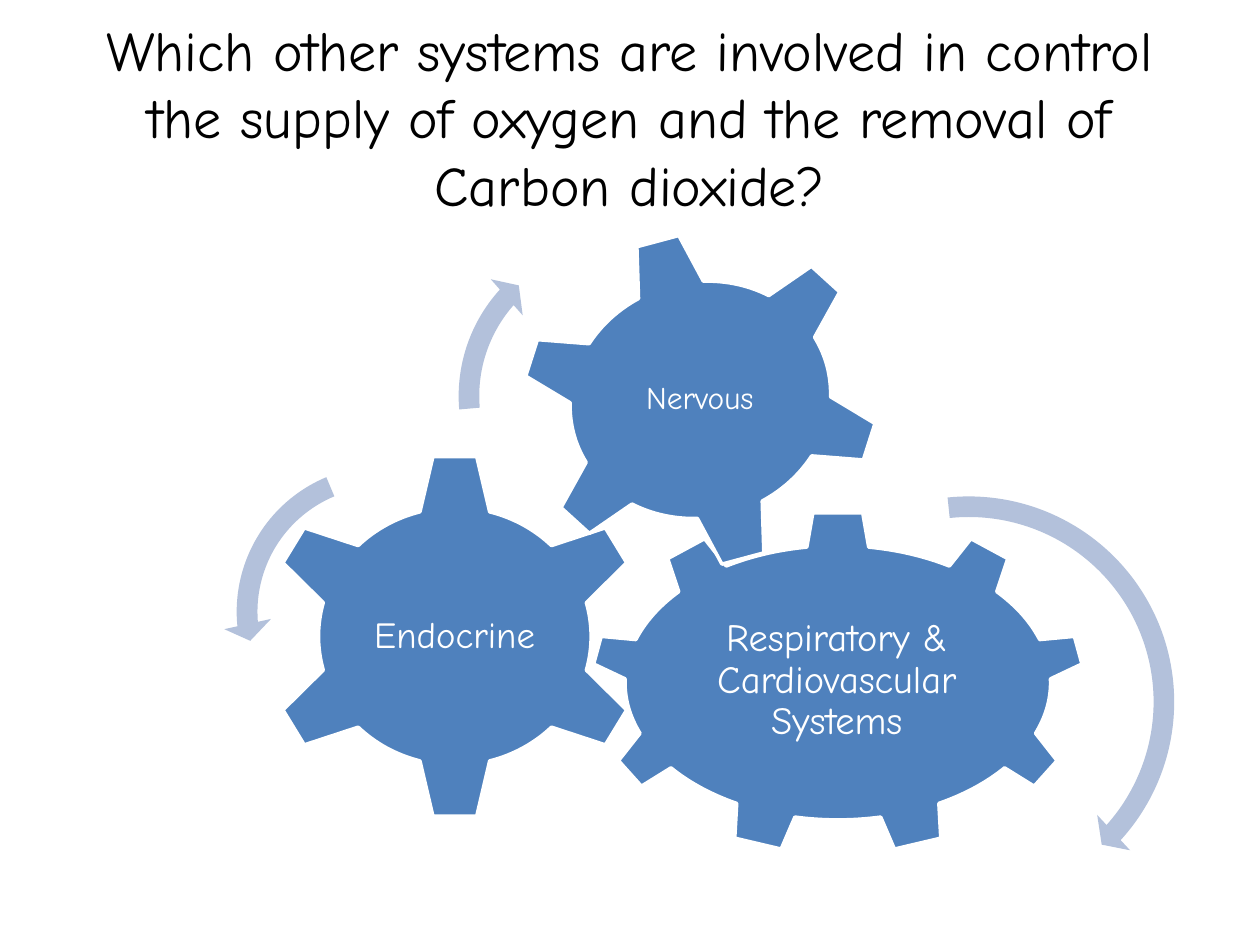
from pptx import Presentation
from pptx.dml.color import RGBColor
from pptx.enum.shapes import MSO_SHAPE
from pptx.enum.text import MSO_ANCHOR, PP_ALIGN
from pptx.util import Cm, Pt

GEAR_6, GEAR_9 = MSO_SHAPE.GEAR_6, MSO_SHAPE.GEAR_9
CLOCKWISE, ANTICLOCKWISE = MSO_SHAPE.CIRCULAR_ARROW, MSO_SHAPE.LEFT_CIRCULAR_ARROW
MIDDLE, CENTER = MSO_ANCHOR.MIDDLE, PP_ALIGN.CENTER

FONT = "Comic Neue"
COLORS = {"gear": "4F81BD", "arrow": "B3C1DB", "light": "FFFFFF", "title": "000000"}

QUESTION = ("Which other systems are involved in control the supply of oxygen "
            "and the removal of Carbon dioxide?")
QUESTION_BOX = (1.27, 0.76, 22.86, 3.18)

SYSTEMS = [
    {"name": "Respiratory & Cardiovascular Systems", "size": 22, "gear": GEAR_9, "turn": 0,
     "gear_box": (11.91, 10.31, 9.96, 6.91), "name_box": (13.67, 11.94, 6.4, 3.56)},
    {"name": "Endocrine", "size": 21, "gear": GEAR_6, "turn": 0,
     "gear_box": (5.31, 9.12, 7.72, 7.42), "name_box": (7.21, 11, 3.91, 3.66)},
    {"name": "Nervous", "size": 18, "gear": GEAR_6, "turn": 345,
     "gear_box": (10.46, 4.67, 7.32, 6.78), "name_box": (12.09, 6.12, 4.04, 3.86)},
]

# direction, left, top, diameter, thickness, (head, end, start) in degrees, head width
ARROWS = [
    (CLOCKWISE, 15.11, 9.73, 8.84, 0.047, (4.98, 42.06, 264.09), 0.055),
    (ANTICLOCKWISE, 4.5, 9.12, 6.43, 0.065, (7.17, 174.82, 247.3), 0.075),
    (CLOCKWISE, 8.97, 4.52, 6.93, 0.06, (6.57, 221.9, 175.14), 0.07),
]
ADJUSTMENT_PER_DEGREE = 0.6


def color(key):
    return RGBColor.from_string(COLORS[key])


def add_filled(slide, kind, box, fill):
    shape = slide.shapes.add_shape(kind, *map(Cm, box))
    shape.shadow.inherit = False
    shape.fill.solid()
    shape.fill.fore_color.rgb = color(fill)
    return shape


def add_text(slide, text, box, size, ink, margin=None, spacing=None):
    frame = slide.shapes.add_textbox(*map(Cm, box)).text_frame
    frame.word_wrap = True
    frame.vertical_anchor = MIDDLE
    if margin is not None:
        frame.margin_left = frame.margin_right = Cm(margin)
        frame.margin_top = frame.margin_bottom = Cm(margin)
    paragraph = frame.paragraphs[0]
    paragraph.text = text
    paragraph.alignment = CENTER
    paragraph.line_spacing = spacing
    paragraph.font.name = FONT
    paragraph.font.size = Pt(size)
    paragraph.font.color.rgb = color(ink)


def add_system(slide, system):
    gear = add_filled(slide, system["gear"], system["gear_box"], "gear")
    gear.rotation = system["turn"]
    gear.line.color.rgb = color("light")
    gear.line.width = Pt(2)
    add_text(slide, system["name"], system["name_box"], system["size"], "light", 0.08, 0.9)


def add_arrow(slide, direction, left, top, diameter, thickness, angles, head_width):
    arrow = add_filled(slide, direction, (left, top, diameter, diameter), "arrow")
    arrow.line.fill.background()
    turns = [angle * ADJUSTMENT_PER_DEGREE for angle in angles]
    for index, value in enumerate([thickness, *turns, head_width]):
        arrow.adjustments[index] = value


def main():
    deck = Presentation()
    deck.slide_width, deck.slide_height = Cm(25.4), Cm(19.05)
    slide = deck.slides.add_slide(deck.slide_layouts[6])
    add_text(slide, QUESTION, QUESTION_BOX, 32, "title")
    for system in SYSTEMS:
        add_system(slide, system)
    for arrow in ARROWS:
        add_arrow(slide, *arrow)
    deck.save("out.pptx")


if __name__ == "__main__":
    main()
